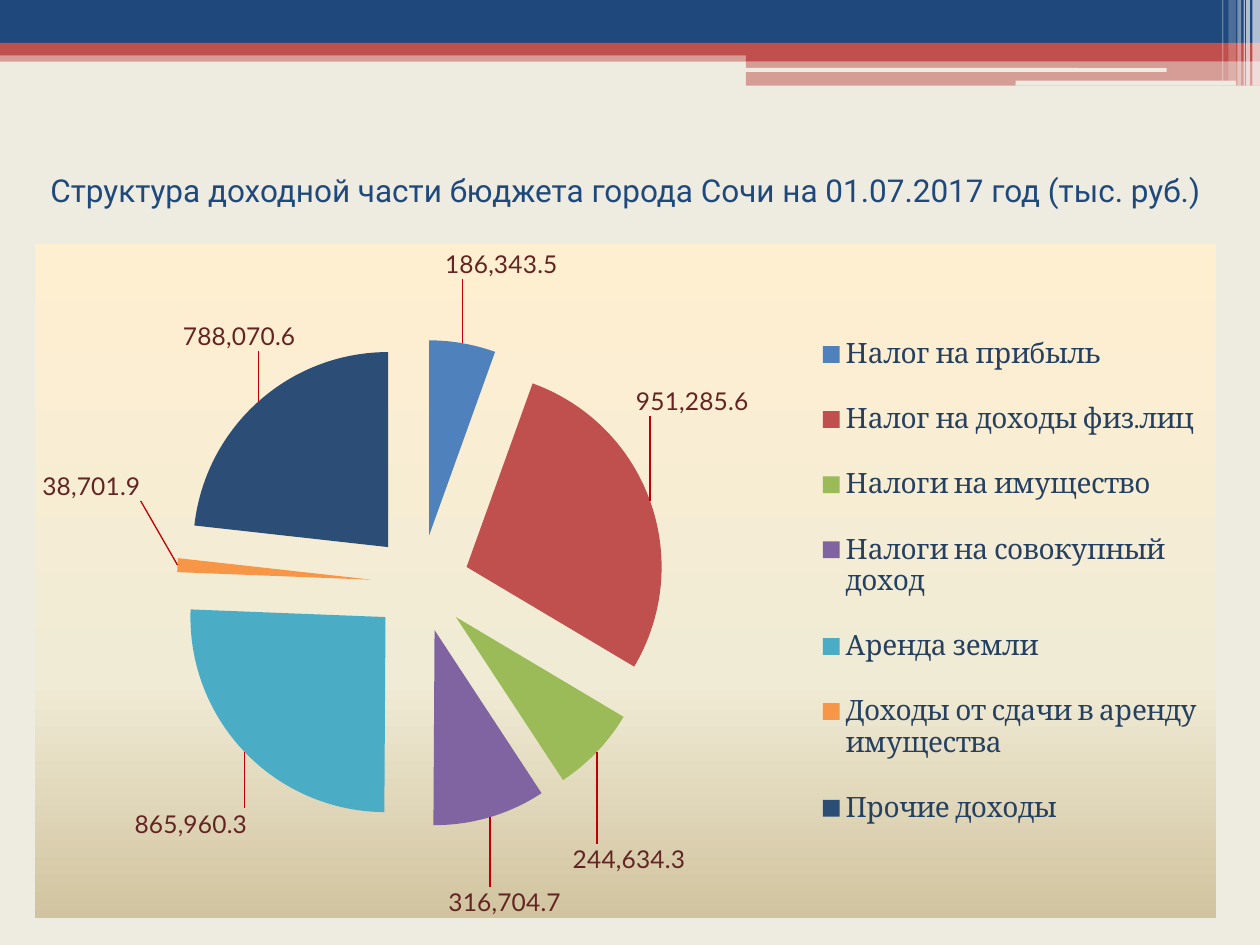
from typing import NamedTuple

from lxml.etree import SubElement
from pptx import Presentation
from pptx.chart.data import CategoryChartData
from pptx.dml.color import RGBColor
from pptx.enum.chart import XL_CHART_TYPE, XL_LABEL_POSITION, XL_LEGEND_POSITION
from pptx.enum.shapes import MSO_SHAPE
from pptx.enum.text import MSO_ANCHOR, PP_ALIGN
from pptx.oxml import parse_xml
from pptx.oxml.ns import nsdecls, qn
from pptx.util import Inches, Pt

WIDTH, HEIGHT = Inches(10), Inches(7.5)
NAVY, RED, CREAM, WHITE = "1F497D", "C0504D", "EEECE1", "FFFFFF"
NUMBER_FORMAT = "#,##0.0"


class Box(NamedTuple):
    """Left, top, width and height in percent of the slide."""
    x: float
    y: float
    w: float
    h: float


class Bar(NamedTuple):
    """A decorative bar of the header, with opacity in percent."""
    box: Box
    color: str
    alpha: int = 100
    kind: MSO_SHAPE = MSO_SHAPE.RECTANGLE


class Income(NamedTuple):
    """A pie slice; dx and dy move its label in percent of the chart."""
    name: str
    value: float
    color: str
    dx: float
    dy: float


BARS = [
    Bar(Box(0, 5.33, 100, 1.2), RED, 50),
    Bar(Box(0, 0, 100, 4.53), NAVY),
    Bar(Box(0, 4.53, 100, 1.33), RED),
    Bar(Box(59.2, 5.2, 40.8, 1.3), RED),
    Bar(Box(59.2, 6.5, 40.8, 2.57), RED, 50),
    Bar(Box(59.1, 7.2, 33.5, 0.4), CREAM, kind=MSO_SHAPE.ROUNDED_RECTANGLE),
    Bar(Box(80.6, 8.53, 17.5, 0.53), CREAM, kind=MSO_SHAPE.ROUNDED_RECTANGLE),
    Bar(Box(99.4, 0, 0.6, 9.07), WHITE, 65),
    Bar(Box(98.9, 0, 0.3, 9.07), WHITE, 65),
    Bar(Box(98.7, 0, 0.1, 9.07), WHITE, 60),
    Bar(Box(98.2, 0, 0.3, 9.07), WHITE, 40),
    Bar(Box(97.5, 0, 0.6, 8.53), WHITE, 20),
    Bar(Box(97, 0, 0.1, 8.53), WHITE, 30),
]
INCOMES = [
    Income("Налог на прибыль", 186343.5, "4F81BD", -1.6, -8.5),
    Income("Налог на доходы физ.лиц", 951285.6, "C0504D", -1.8, -12.3),
    Income("Налоги на имущество", 244634.3, "9BBB59", -2.5, 12.9),
    Income("Налоги на совокупный доход", 316704.7, "8064A2", -3.7, 9.3),
    Income("Аренда земли", 865960.3, "4BACC6", 0.7, 7.6),
    Income("Доходы от сдачи в аренду имущества", 38701.9, "F79646", -2.5, -11.7),
    Income("Прочие доходы", 788070.6, "2C4D75", 3.6, -6.7),
]
TITLE = "Структура доходной части бюджета города Сочи на 01.07.2017 год (тыс. руб.)"
TITLE_BOX = Box(2.8, 12.27, 93.7, 15.6)
CHART_BOX = Box(2.8, 25.87, 93.7, 71.33)
PIE_BOX = Box(12, 14.1, 41.3, 72.4)
LEGEND_BOX = Box(65.8, 9, 33.5, 82)
GRADIENT = [(0, "FFEFD1"), (65, "F0EBD5"), (100, "D1C39F")]


def rgb(color: str) -> RGBColor:
    """Return the colour of a hex string."""
    return RGBColor.from_string(color)


def place(box: Box) -> tuple:
    """Turn shares of the slide into lengths."""
    return tuple(int(v * side / 100) for v, side in zip(box, (WIDTH, HEIGHT) * 2))


def style(font, name: str, size: float, color: str) -> None:
    """Set the name, size and colour of a font."""
    font.name, font.size = name, Pt(size)
    font.color.rgb = rgb(color)


def add_bar(s, bar: Bar) -> None:
    """Draw one header bar."""
    sp = s.shapes.add_shape(bar.kind, *place(bar.box))
    sp.shadow.inherit = False
    sp.line.fill.background()
    sp.fill.solid()
    sp.fill.fore_color.rgb = rgb(bar.color)
    if bar.alpha < 100:
        clr = sp.fill._xPr.find(qn("a:solidFill"))[0]
        SubElement(clr, qn("a:alpha")).set("val", str(bar.alpha * 1000))


def manual_layout(**values: object):
    """Build a chart layout from named values."""
    items = "".join(f'<c:{k} val="{v}"/>' for k, v in values.items())
    return parse_xml(f'<c:layout {nsdecls("c")}><c:manualLayout>{items}'
                     "</c:manualLayout></c:layout>")


def box_layout(box: Box, **target: str):
    """Build a layout that fixes a box inside the chart."""
    shares = {k: v / 100 for k, v in zip("xywh", box)}
    return manual_layout(**target, xMode="edge", yMode="edge", **shares)


def add_title(s) -> None:
    """Fill and place the title."""
    sp = s.shapes.title
    sp.left, sp.top, sp.width, sp.height = place(TITLE_BOX)
    tf = sp.text_frame
    tf.word_wrap = True
    tf.vertical_anchor = MSO_ANCHOR.MIDDLE
    p = tf.paragraphs[0]
    p.alignment = PP_ALIGN.CENTER
    r = p.add_run()
    r.text = TITLE
    style(r.font, "Roboto", 18, NAVY)


def format_slices(series) -> None:
    """Colour and explode the slices and move their labels."""
    series._element.find(qn("c:tx")).addnext(
        parse_xml(f'<c:explosion {nsdecls("c")} val="25"/>'))
    labels = series.data_labels
    labels.show_value = True
    labels.number_format, labels.number_format_is_linked = NUMBER_FORMAT, False
    labels.position = XL_LABEL_POSITION.OUTSIDE_END
    style(labels.font, "Lato", 14, "632523")
    for i, income in enumerate(INCOMES):
        point = series.points[i]
        point.format.fill.solid()
        point.format.fill.fore_color.rgb = rgb(income.color)
        label = point.data_label
        style(label.font, "Lato", 14, "632523")
        label.position = XL_LABEL_POSITION.OUTSIDE_END
        label._dLbl.find(qn("c:idx")).addnext(
            manual_layout(x=income.dx / 100, y=income.dy / 100))
    labels._element.append(parse_xml(
        f'<c:leaderLines {nsdecls("c", "a")}><c:spPr><a:ln w="9525"><a:solidFill>'
        '<a:srgbClr val="C00000"/></a:solidFill></a:ln></c:spPr></c:leaderLines>'))


def add_pie(s) -> None:
    """Draw the pie of incomes with its legend and backdrop."""
    data = CategoryChartData(number_format=NUMBER_FORMAT)
    data.categories = [income.name for income in INCOMES]
    data.add_series("Series 1", [income.value for income in INCOMES])
    chart = s.shapes.add_chart(XL_CHART_TYPE.PIE, *place(CHART_BOX), data).chart
    chart.has_title = False
    style(chart.font, "Cambria", 18, "000000")
    plot = chart.plots[0]
    plot.vary_by_categories = True
    format_slices(plot.series[0])
    chart.has_legend = True
    legend = chart.legend
    legend.position = XL_LEGEND_POSITION.RIGHT
    legend.include_in_layout = False
    style(legend.font, "Cambria", 16, "254061")
    for old in legend._element.findall(qn("c:layout")):
        legend._element.remove(old)
    legend._element.find(qn("c:legendPos")).addnext(box_layout(LEGEND_BOX))
    area = chart._chartSpace.chart.plotArea
    for old in area.findall(qn("c:layout")):
        area.remove(old)
    area.insert(0, box_layout(PIE_BOX, layoutTarget="inner"))
    stops = "".join(f'<a:gs pos="{pos * 1000}"><a:srgbClr val="{color}"/></a:gs>'
                    for pos, color in GRADIENT)
    chart._chartSpace.chart.addnext(parse_xml(
        f'<c:spPr {nsdecls("c", "a")}><a:gradFill><a:gsLst>{stops}</a:gsLst>'
        '<a:lin ang="5400000" scaled="0"/></a:gradFill><a:ln><a:noFill/></a:ln></c:spPr>'))


def main() -> None:
    """Build and save the slide."""
    prs = Presentation()
    prs.slide_width, prs.slide_height = WIDTH, HEIGHT
    s = prs.slides.add_slide(prs.slide_layouts[5])
    s.background.fill.solid()
    s.background.fill.fore_color.rgb = rgb(CREAM)
    for bar in BARS:
        add_bar(s, bar)
    add_title(s)
    add_pie(s)
    prs.save("out.pptx")


if __name__ == "__main__":
    main()
